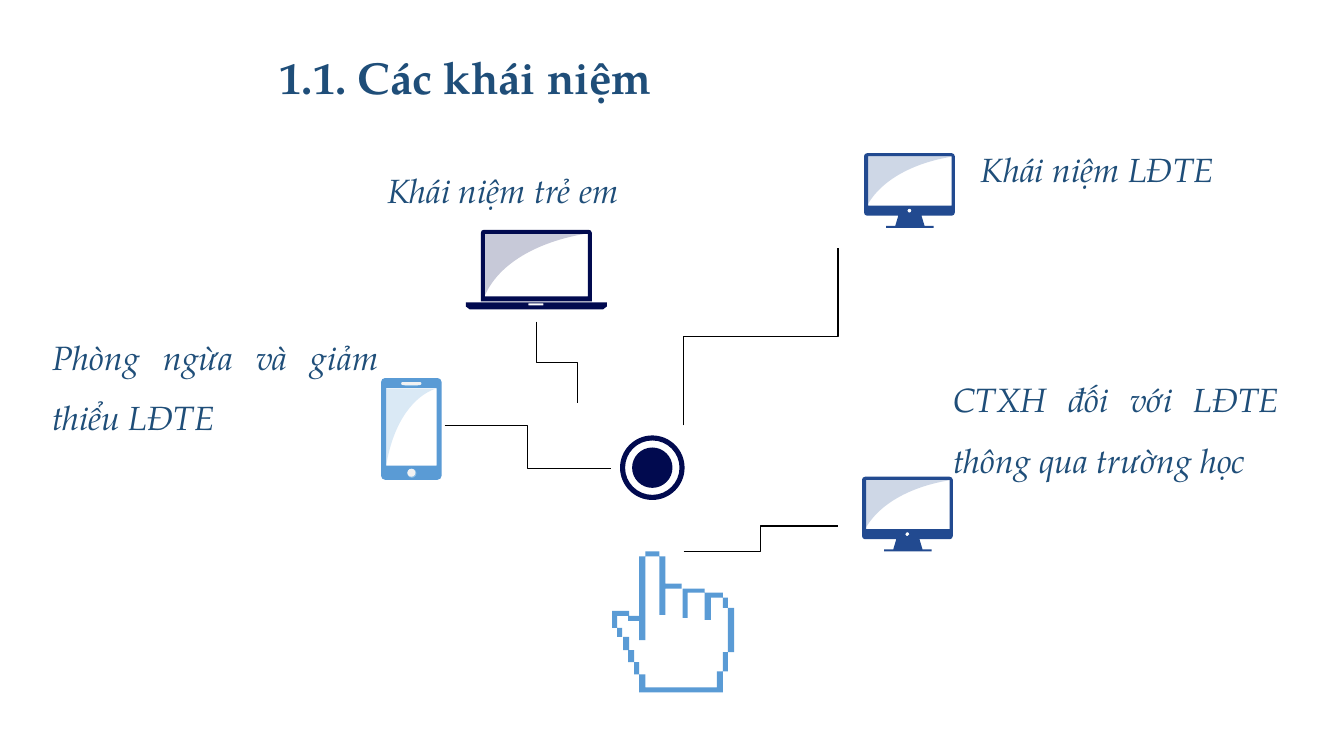
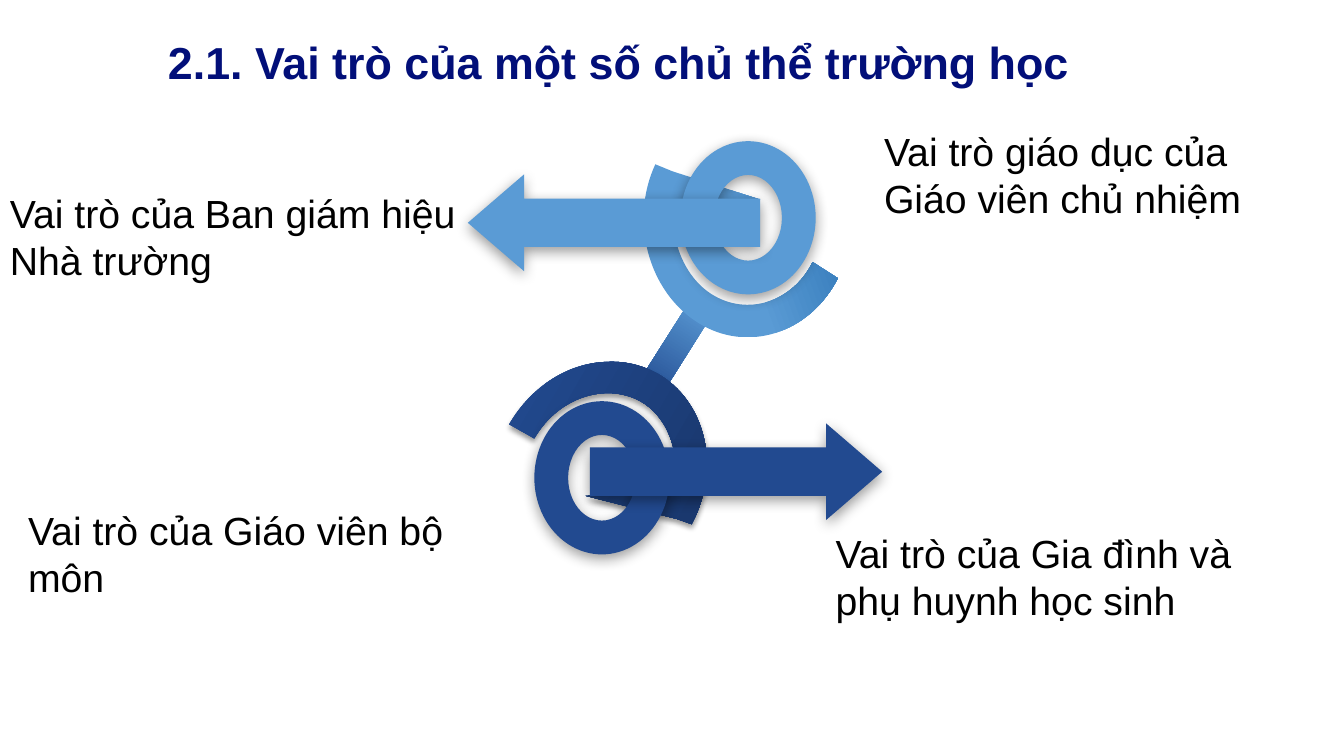
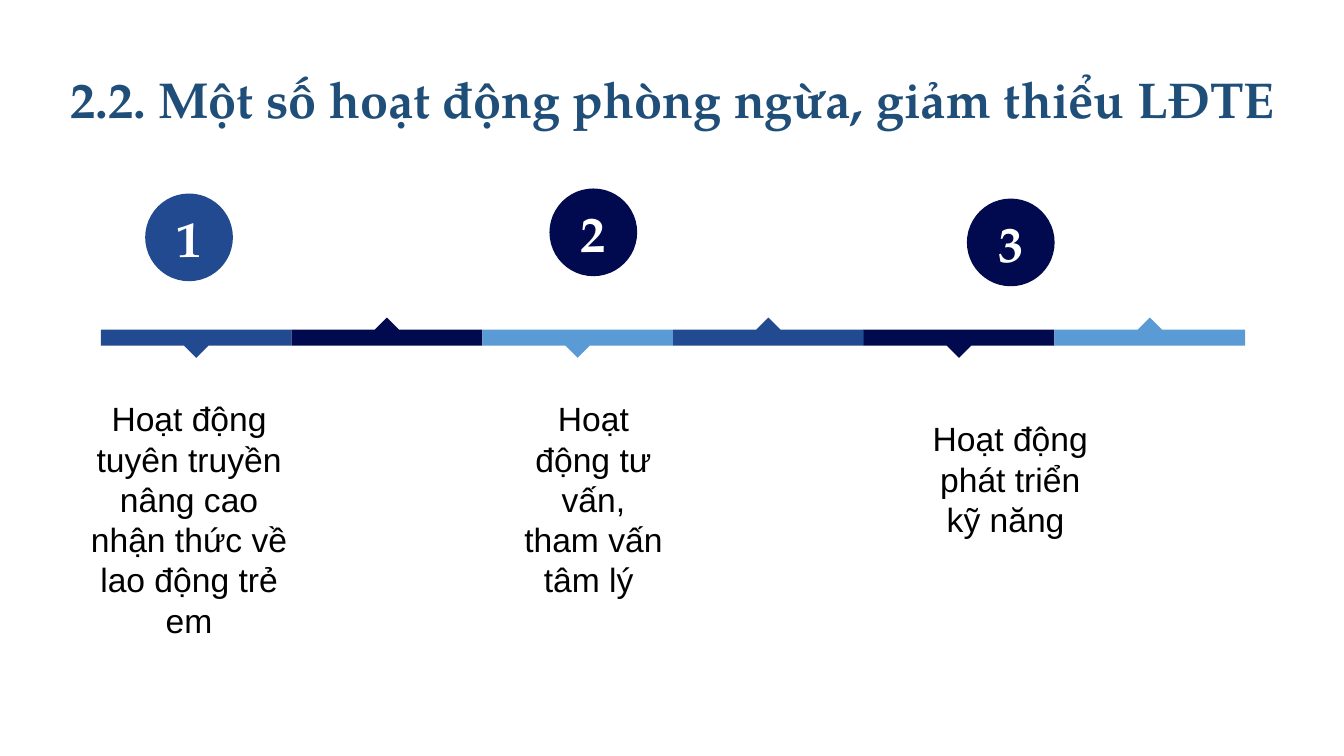
from lxml.etree import SubElement
from pptx import Presentation
from pptx.dml.color import RGBColor
from pptx.enum.shapes import MSO_CONNECTOR, MSO_SHAPE
from pptx.enum.text import MSO_ANCHOR, MSO_AUTO_SIZE, PP_ALIGN
from pptx.oxml.ns import qn
from pptx.util import Inches, Pt

COLORS = {
    "navy": "010A4F",
    "blue": "224A90",
    "deep": "19376C",
    "sky": "5A9BD5",
    "light": "87BCE6",
    "azure": "2E75B5",
    "heading": "1F4E79",
    "ink": "020F79",
    "black": "000000",
    "white": "FFFFFF",
    "pale": "F2F2F2",
}
SERIF = "TeX Gyre Pagella"
SANS = "Arial"
TITLE = {"alignment": PP_ALIGN.CENTER, "line_spacing": 0.9, "space_before": Pt(10)}
CONCEPT = {"name": SERIF, "size": Pt(24), "italic": True}
NUMBER = {"name": SERIF, "size": Pt(36), "bold": True}
CENTERED = {"alignment": PP_ALIGN.CENTER}


def rgb(color):
    return RGBColor.from_string(COLORS[color])


def assign(target, formats):
    for name, value in formats.items():
        setattr(target, name, value)


def write(shape, words, font, color, paragraph_formats, frame_formats):
    frame = shape.text_frame
    assign(frame, {"word_wrap": True, **frame_formats})
    paragraph = frame.paragraphs[0]
    assign(paragraph, paragraph_formats)
    run = paragraph.add_run()
    run.text = words
    assign(run.font, font)
    run.font.color.rgb = rgb(color)


def add_label(slide, box, words, font, color="black", paragraph_formats={}, **frame_formats):
    label = slide.shapes.add_textbox(*map(Inches, box))
    frame_formats = {"auto_size": MSO_AUTO_SIZE.SHAPE_TO_FIT_TEXT, **frame_formats}
    write(label, words, font, color, paragraph_formats, frame_formats)


def add_title(slide, left, top, words, size=32, name=SERIF, color="heading"):
    font = {"name": name, "size": Pt(size), "bold": True}
    add_label(slide, (left, top, 12.66, 0.79), words, font, color, TITLE,
              auto_size=MSO_AUTO_SIZE.NONE, vertical_anchor=MSO_ANCHOR.MIDDLE)


def paint(shape, color, alpha=None):
    shape.shadow.inherit = False
    shape.line.fill.background()
    shape.fill.solid()
    shape.fill.fore_color.rgb = rgb(color)
    if alpha:
        tint = shape.fill._xPr.find(".//" + qn("a:srgbClr"))
        SubElement(tint, qn("a:alpha"), val=str(alpha * 1000))
    return shape


def paint_gradient(shape, stops, angle):
    shape.fill.gradient()
    shape.fill.gradient_angle = (360 - angle) % 360
    for stop, (position, color) in zip(shape.fill.gradient_stops, stops):
        stop.position = position
        stop.color.rgb = rgb(color)


def cast_shadow(shape, blur=10):
    effects = shape._element.spPr.find(qn("a:effectLst"))
    cast = SubElement(effects, qn("a:outerShdw"), blurRad=str(Pt(blur)), dist=str(Pt(3)),
                      dir="5400000", algn="t", rotWithShape="0")
    tint = SubElement(cast, qn("a:srgbClr"), val=COLORS["black"])
    SubElement(tint, qn("a:alpha"), val="40000")


def add_preset(slide, kind, box, color, adjustments=(), rotation=0):
    shape = paint(slide.shapes.add_shape(kind, *map(Inches, box)), color)
    for index, value in enumerate(adjustments):
        shape.adjustments[index] = value
    shape.rotation = rotation
    return shape


def trace(steps, samples=16):
    points = [steps[0]]
    for step in steps[1:]:
        if len(step) == 2:
            points.append(step)
            continue
        corners = [points[-1], step[:2], step[2:4], step[4:]]
        for index in range(1, samples + 1):
            t = index / samples
            weights = ((1 - t) ** 3, 3 * t * (1 - t) ** 2, 3 * t * t * (1 - t), t ** 3)
            points.append(tuple(sum(w * c[axis] for w, c in zip(weights, corners))
                                for axis in (0, 1)))
    return points


def draw_curves(shape, left, top, contours):
    geometry = shape._element.find(".//" + qn("a:path"))
    for segment in list(geometry):
        geometry.remove(segment)
    for steps in contours:
        for index, step in enumerate(steps):
            tag = "a:moveTo" if index == 0 else "a:lnTo" if len(step) == 2 else "a:cubicBezTo"
            segment = SubElement(geometry, qn(tag))
            for x, y in zip(step[::2], step[1::2]):
                SubElement(segment, qn("a:pt"), x=str(Inches(left + x) - shape.left),
                           y=str(Inches(top + y) - shape.top))
        SubElement(geometry, qn("a:close"))


def add_outline(slide, left, top, contours, color, alpha=None):
    builder = None
    for steps in contours:
        points = [(Inches(left + x), Inches(top + y)) for x, y in trace(steps)]
        if builder is None:
            builder = slide.shapes.build_freeform(*points[0])
        else:
            builder.move_to(*points[0])
        builder.add_line_segments(points[1:], close=True)
    shape = builder.convert_to_shape()
    draw_curves(shape, left, top, contours)
    return paint(shape, color, alpha)


def rectangle(left, top, right, bottom):
    return [(left, top), (right, top), (right, bottom), (left, bottom)]


def rounded(left, top, right, bottom, radius):
    near = 0.45 * radius
    return [(left + radius, top), (right - radius, top),
            (right - near, top, right, top + near, right, top + radius),
            (right, bottom - radius),
            (right, bottom - near, right - near, bottom, right - radius, bottom),
            (left + radius, bottom),
            (left + near, bottom, left, bottom - near, left, bottom - radius),
            (left, top + radius),
            (left, top + near, left + near, top, left + radius, top)]


def circle(center_x, center_y, radius):
    return rounded(center_x - radius, center_y - radius,
                   center_x + radius, center_y + radius, radius)


def add_glare(slide, left, top, width, height, color):
    curve = (0.16 * width, 0.39 * height, 0.61 * width, 0.09 * height, width, 0)
    add_outline(slide, left, top, [[(0, 0), (0, height), curve]], color, 22)


def add_monitor(slide, left, top):
    stand = [(0.34, 0.62), (0.57, 0.62), (0.6, 0.72), (0.69, 0.72), (0.69, 0.74),
             (0.22, 0.74), (0.22, 0.72), (0.31, 0.72)]
    add_outline(slide, left, top, [rounded(0, 0, 0.9, 0.62, 0.03),
                                   rectangle(0.04, 0.03, 0.87, 0.52),
                                   circle(0.45, 0.57, 0.02), stand], "blue")
    add_glare(slide, left, top + 0.03, 0.9, 0.55, "blue")


def add_laptop(slide, left, top):
    lid = [(0.18, 0), (1.22, 0), (1.23, 0, 1.25, 0.01, 1.25, 0.03), (1.25, 0.71),
           (0.15, 0.71), (0.15, 0.03), (0.15, 0.01, 0.16, 0, 0.18, 0)]
    base = [(0, 0.72), (1.4, 0.72), (1.4, 0.76), (1.36, 0.79), (0.04, 0.79), (0, 0.76)]
    add_outline(slide, left, top, [lid, rectangle(0.19, 0.04, 1.21, 0.66), base,
                                   rectangle(0.62, 0.73, 0.77, 0.75)], "navy")
    add_glare(slide, left + 0.19, top + 0.03, 1.06, 0.62, "navy")


def add_phone(slide, left, top):
    add_outline(slide, left, top, [rounded(0, 0, 0.6, 1.01, 0.04),
                                   rectangle(0.05, 0.1, 0.55, 0.87)], "sky")
    for kind, x, y, width, height, color in (
        (MSO_SHAPE.ROUNDED_RECTANGLE, 0.23, 0.05, 0.14, 0.03, "light"),
        (MSO_SHAPE.OVAL, 0.26, 0.9, 0.09, 0.09, "light"),
        (MSO_SHAPE.ROUNDED_RECTANGLE, 0.2, 0.04, 0.2, 0.03, "pale"),
        (MSO_SHAPE.OVAL, 0.26, 0.9, 0.08, 0.08, "pale"),
    ):
        adjustments = [0.5] if kind == MSO_SHAPE.ROUNDED_RECTANGLE else []
        add_preset(slide, kind, (left + x, top + y, width, height), color, adjustments)
    add_glare(slide, left + 0.05, top + 0.11, 0.48, 0.76, "sky")


def add_target(slide, left, top):
    center = 0.32
    add_outline(slide, left, top, [circle(center, center, radius)
                                   for radius in (0.2, 0.27, 0.32)], "navy")


def add_hand(slide, left, top):
    palm = [(0.33, 0.05), (0.47, 0.05), (0.47, 0.63), (0.53, 0.63), (0.53, 0.37), (0.7, 0.37),
            (0.7, 0.63), (0.75, 0.63), (0.75, 0.4), (0.92, 0.4), (0.92, 0.63), (0.93, 0.63),
            (0.93, 0.45), (1.1, 0.45), (1.1, 0.56), (1.2, 0.56), (1.2, 1), (1.1, 1),
            (1.1, 1.19), (1.07, 1.19), (1.07, 1.36), (0.31, 1.36), (0.31, 1.22), (0.27, 1.22),
            (0.27, 1.1), (0.2, 1.1), (0.2, 0.98), (0.13, 0.98), (0.13, 0.85), (0.08, 0.85),
            (0.08, 0.76), (0, 0.76), (0, 0.64), (0.31, 0.64), (0.31, 0.63), (0.33, 0.63)]
    pixels = [(0.33, 0, 0.47, 0.05), (0.27, 0.05, 0.33, 0.88), (0.47, 0.05, 0.53, 0.63),
              (0.53, 0.32, 0.69, 0.37), (0.7, 0.37, 0.75, 0.66), (0.75, 0.37, 0.92, 0.41),
              (0.92, 0.41, 0.98, 0.68), (0.98, 0.41, 1.1, 0.46), (1.1, 0.46, 1.15, 0.56),
              (1.15, 0.56, 1.21, 1), (1.1, 1, 1.15, 1.19), (1.04, 1.19, 1.1, 1.4),
              (0.33, 1.35, 1.04, 1.4), (0.27, 1.22, 0.33, 1.4), (0.22, 1.1, 0.27, 1.22),
              (0.16, 0.98, 0.22, 1.1), (0.11, 0.85, 0.17, 0.98), (0.05, 0.76, 0.1, 0.85),
              (0, 0.59, 0.05, 0.76), (0.05, 0.59, 0.17, 0.64), (0.16, 0.64, 0.27, 0.69)]
    add_outline(slide, left, top, [palm], "white")
    add_outline(slide, left, top, [rectangle(*pixel) for pixel in pixels], "sky")


def add_link(slide, begin, end, vertical=False):
    (x1, y1), (x2, y2) = begin, end
    turn = -1 if y2 > y1 else 1
    if vertical:
        middle_x, middle_y = (x1 + x2) / 2, (y1 + y2) / 2
        half_x, half_y = turn * (y2 - y1) / 2, -turn * (x2 - x1) / 2
        x1, y1 = middle_x - half_x, middle_y - half_y
        x2, y2 = middle_x + half_x, middle_y + half_y
    link = slide.shapes.add_connector(MSO_CONNECTOR.ELBOW, *map(Inches, (x1, y1, x2, y2)))
    link.line.color.rgb = rgb("black")
    link.line.width = Pt(1)
    properties = link._element.spPr
    SubElement(properties, qn("a:effectLst"))
    if vertical:
        properties.find(qn("a:xfrm")).set("rot", str(turn * 90 % 360 * 60000))


def build_concepts(slide):
    add_title(slide, -1.71, 0.4, "1.1. Các khái niệm")
    add_target(slide, 6.15, 4.32)
    add_hand(slide, 6.07, 5.47)
    add_phone(slide, 3.78, 3.75)
    add_laptop(slide, 4.62, 2.28)
    for left, top in ((8.57, 1.52), (8.55, 4.73)):
        add_monitor(slide, left, top)
    for begin, end, vertical in (
        ((4.41, 4.22), (6.06, 4.65), False),
        ((5.32, 3.19), (5.73, 4), True),
        ((6.78, 5.47), (8.31, 5.22), False),
        ((6.78, 4.22), (8.31, 2.46), True),
    ):
        add_link(slide, begin, end, vertical)
    for box, words, spacing, alignment in (
        ((0.42, 3.09, 3.43, 1.31), "Phòng ngừa và giảm thiểu LĐTE", 1.5, PP_ALIGN.JUSTIFY),
        ((9.63, 1.23, 3.7, 0.64), "Khái niệm LĐTE", 1.5, PP_ALIGN.LEFT),
        ((3.74, 1.64, 5.59, 0.5), "Khái niệm trẻ em", 1.0, PP_ALIGN.JUSTIFY),
        ((9.36, 3.51, 3.43, 1.31), "CTXH đối với LĐTE thông qua trường học", 1.5,
         PP_ALIGN.JUSTIFY),
    ):
        add_label(slide, box, words, CONCEPT, "heading",
                  {"line_spacing": spacing, "alignment": alignment})


def add_ring_and_arrow(slide, ring_left, ring_top, arrow_left, arrow_top, color, rotation):
    for kind, box, adjustments in (
        (MSO_SHAPE.DONUT, (ring_left, ring_top, 1.34, 1.52), [0.25]),
        (MSO_SHAPE.RIGHT_ARROW, (arrow_left, arrow_top, 2.9, 0.96), [0.5, 0.58]),
    ):
        cast_shadow(add_preset(slide, kind, box, color, adjustments, rotation))


def add_chain(slide, left, top):
    bar = add_preset(slide, MSO_SHAPE.FLOWCHART_PROCESS, (left + 1.92, top + 1.64, 0.26, 0.86),
                     "sky", rotation=32.3)
    paint_gradient(bar, [(0, "sky"), (1, "blue")], 90)
    lower_hook = add_outline(slide, left + 0.41, top + 2.18, [[
        (0.97, 0.01), (1.14, 0, 1.31, 0.04, 1.46, 0.12), (1.95, 0.39, 2.11, 1.06, 1.81, 1.62),
        (1.67, 1.57), (0.76, 1.34), (1.62, 1.29), (1.64, 1.21),
        (1.69, 0.89, 1.57, 0.55, 1.3, 0.4), (0.95, 0.21, 0.48, 0.37, 0.25, 0.77),
        (0, 0.63), (0.22, 0.25, 0.59, 0.02, 0.97, 0.01)]], "blue")
    paint_gradient(lower_hook, [(0, "blue"), (1, "deep")], 30)
    cast_shadow(lower_hook, 4)
    add_ring_and_arrow(slide, left + 0.66, top + 2.58, left + 1.21, top + 2.8, "blue", 0)
    upper_hook = add_outline(slide, left + 1.74, top + 0.23, [[
        (0.12, 0), (0.29, 0.07), (1.16, 0.35), (0.32, 0.35), (0.3, 0.43),
        (0.27, 0.76, 0.41, 1.12, 0.68, 1.29), (1.03, 1.51, 1.48, 1.37, 1.68, 0.97),
        (1.93, 1.13), (1.65, 1.68, 1.03, 1.88, 0.54, 1.57),
        (0.05, 1.26, -0.14, 0.56, 0.12, 0)]], "sky")
    paint_gradient(upper_hook, [(0.5, "sky"), (1, "azure")], 340)
    add_ring_and_arrow(slide, left + 2.11, top, left, top + 0.33, "sky", 180)


def build_roles(slide):
    add_title(slide, -0.19, 0.25, "2.1. Vai trò của một số chủ thể trường học",
              name=SANS, color="ink")
    add_chain(slide, 4.64, 1.4)
    for left, top, width, words in (
        (8.67, 1.21, 4.2, "Vai trò giáo dục của Giáo viên chủ nhiệm"),
        (0, 1.83, 4.73, "Vai trò của Ban giám hiệu Nhà trường"),
        (0.18, 4.97, 4.73, "Vai trò của Giáo viên bộ môn"),
        (8.19, 5.2, 4.73, "Vai trò của Gia đình và phụ huynh học sinh"),
    ):
        add_label(slide, (left, top, width, 1.04), words, {"name": SANS, "size": Pt(28)})


def add_ribbon(slide, left, top, width, colors):
    step = width / len(colors)
    thickness, notch = 0.16, 0.12
    for index, color in enumerate(colors):
        points_up = index % 2
        flat, edge = (thickness, 0) if points_up else (0, thickness)
        tip = -notch if points_up else thickness + notch
        middle = step / 2
        add_outline(slide, left + index * step, top, [[
            (0, flat), (step, flat), (step, edge), (middle + notch, edge), (middle, tip),
            (middle - notch, edge), (0, edge)]], color)


def add_activity(slide, number, badge_left, badge_top, color, box, words):
    badge = add_preset(slide, MSO_SHAPE.OVAL, (badge_left, badge_top, 0.87, 0.87), color)
    write(badge, str(number), NUMBER, "white", CENTERED,
          {"vertical_anchor": MSO_ANCHOR.MIDDLE})
    add_label(slide, box, words, {"name": SANS, "size": Pt(24)}, paragraph_formats=CENTERED)


def build_activities(slide):
    add_title(slide, 0.34, 0.62, "2.2. Một số hoạt động phòng ngừa, giảm thiểu LĐTE", 36)
    add_ribbon(slide, 1, 3.27, 11.35, ["blue", "navy", "sky"] * 2)
    activities = (
        (1.44, 1.92, "blue", (0.78, 3.9, 2.19, 2.52),
         "Hoạt động tuyên truyền nâng cao nhận thức về lao động trẻ em"),
        (5.45, 1.87, "navy", (5.09, 3.9, 1.59, 2.12), "Hoạt động tư vấn, tham vấn tâm lý "),
        (9.59, 1.97, "navy", (9.15, 4.1, 1.74, 1.72), "Hoạt động phát triển kỹ năng "),
    )
    for number, activity in enumerate(activities, 1):
        add_activity(slide, number, *activity)


def main():
    deck = Presentation()
    assign(deck, {"slide_width": Inches(13.33), "slide_height": Inches(7.5)})
    for build in (build_concepts, build_roles, build_activities):
        build(deck.slides.add_slide(deck.slide_layouts[6]))
    deck.save("out.pptx")


if __name__ == "__main__":
    main()
